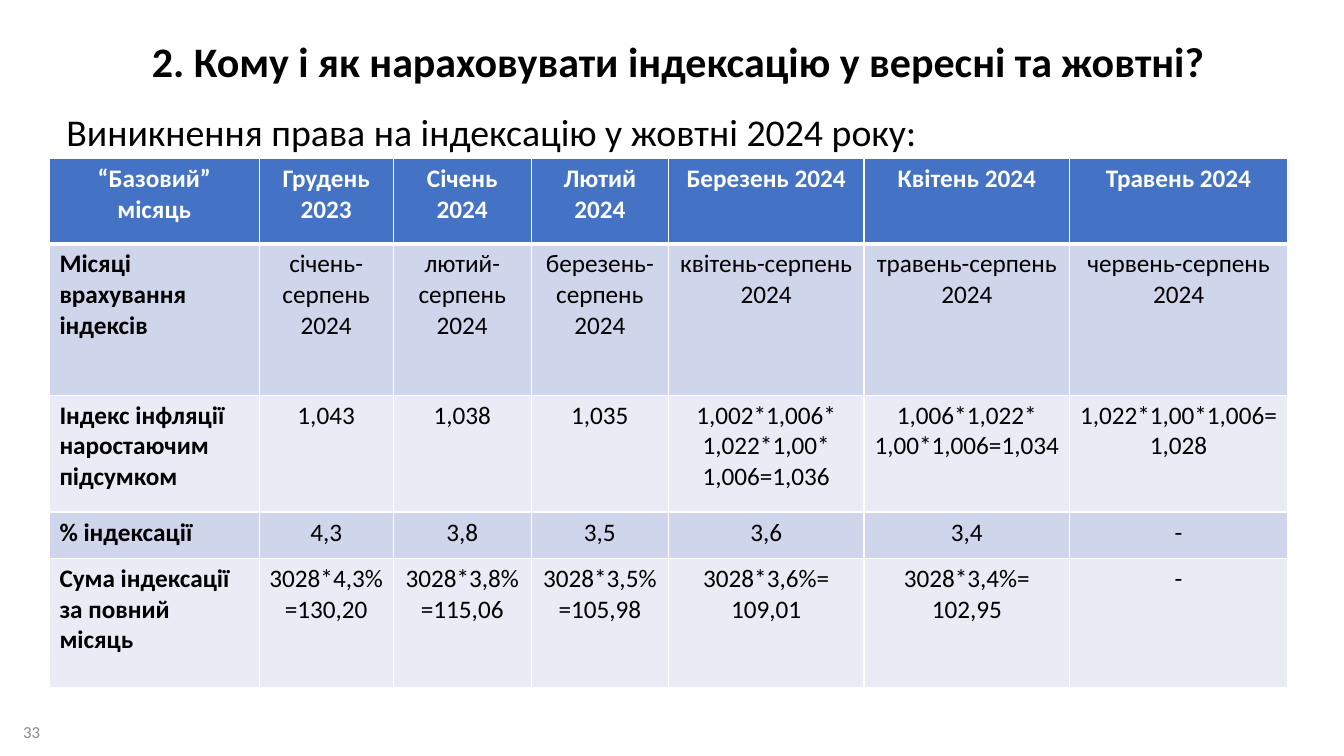
from lxml import etree
from pptx import Presentation, util as u
from pptx.dml.color import RGBColor
from pptx.enum import text
from pptx.oxml import ns

COLORS = {"ink": "000000", "white": "FFFFFF", "number": "898989",
          "header": "4472C4", "band_dark": "CFD5EA", "band_light": "E9EBF5"}

COLUMN_WIDTHS = [2.08, 1.33, 1.37, 1.36, 1.94, 2.04, 2.16]
ROW_HEIGHTS = [0.85, 1.5, 1.16, 0.46, 1.28]
INDEXATION = [
    ["“Базовий” місяць", "Грудень 2023", "Січень 2024", "Лютий 2024",
     "Березень 2024", "Квітень 2024", "Травень 2024"],
    ["Місяці врахування індексів", "січень-серпень 2024", "лютий-серпень 2024",
     "березень-серпень 2024", "квітень-серпень 2024", "травень-серпень 2024",
     "червень-серпень 2024"],
    ["Індекс інфляції наростаючим підсумком", "1,043", "1,038", "1,035",
     "1,002*1,006*\n1,022*1,00*\n1,006=1,036",
     "1,006*1,022*\n1,00*1,006=1,034", "1,022*1,00*1,006=1,028"],
    ["% індексації", "4,3", "3,8", "3,5", "3,6", "3,4", "-"],
    ["Сума індексації за повний місяць", "3028*4,3%=130,20", "3028*3,8%=115,06",
     "3028*3,5%=105,98", "3028*3,6%=\n109,01", "3028*3,4%=\n102,95", "-"],
]


class SlideBuilder:
    """Draws styled text and tables on the current slide."""

    def __init__(self, slide, font="Calibri"):
        self.slide = slide
        self.font = font

    def add_lines(self, frame, wording, size, color, bold=False, centered=False, spacing=None):
        for index, line in enumerate(wording.split("\n")):
            paragraph = frame.add_paragraph() if index else frame.paragraphs[0]
            paragraph.alignment = text.PP_ALIGN.CENTER if centered else text.PP_ALIGN.LEFT
            if spacing:
                paragraph.line_spacing = spacing
            run = paragraph.add_run()
            run.text = line
            run.font.name = self.font
            run.font.size = u.Pt(size)
            run.font.bold = bold
            run.font.color.rgb = RGBColor.from_string(COLORS[color])

    def label(self, box, wording, size, color, anchor=text.MSO_ANCHOR.TOP, **style):
        frame = self.slide.shapes.add_textbox(*map(u.Inches, box)).text_frame
        frame.word_wrap = True
        frame.vertical_anchor = anchor
        self.add_lines(frame, wording, size, color, **style)

    def border(self, cell, side, width):
        line = etree.SubElement(cell._tc.get_or_add_tcPr(), ns.qn(f"a:ln{side}"),
                                w=str(u.Pt(width)))
        fill = etree.SubElement(line, ns.qn("a:solidFill"))
        etree.SubElement(fill, ns.qn("a:srgbClr"), val=COLORS["white"])

    def table(self, left, top, widths, heights, rows, size):
        box = map(u.Inches, (left, top, sum(widths), sum(heights)))
        grid = self.slide.shapes.add_table(len(rows), len(widths), *box).table
        for column, width in zip(grid.columns, widths):
            column.width = u.Inches(width)
        for r, (height, row) in enumerate(zip(heights, rows)):
            grid.rows[r].height = u.Inches(height)
            heading = r == 0
            band = "header" if heading else "band_dark" if r % 2 else "band_light"
            for c, wording in enumerate(row):
                cell = grid.cell(r, c)
                for side in "LRTB":
                    thick = (heading and side == "B") or (r == 1 and side == "T")
                    self.border(cell, side, 3 if thick else 1)
                cell.fill.solid()
                cell.fill.fore_color.rgb = RGBColor.from_string(COLORS[band])
                self.add_lines(cell.text_frame, wording, size, "white" if heading else "ink",
                               bold=heading or c == 0, centered=heading or c > 0)


def main():
    deck = Presentation()
    deck.slide_width, deck.slide_height = u.Inches(13.33), u.Inches(7.5)
    page = SlideBuilder(deck.slides.add_slide(deck.slide_layouts[6]))
    page.label((0.56, 1.03, 12.21, 5.93),
               "Виникнення права на індексацію у жовтні 2024 року:", 27, "ink")
    page.label((0.13, 7.06, 0.55, 0.39), "33", 12, "number", anchor=text.MSO_ANCHOR.MIDDLE)
    page.label((0.45, 0.36, 12.56, 0.57),
               "2. Кому і як нараховувати індексацію у вересні та жовтні?", 30, "ink",
               bold=True, centered=True, spacing=0.9)
    page.table(0.49, 1.57, COLUMN_WIDTHS, ROW_HEIGHTS, INDEXATION, 18)
    deck.save("out.pptx")


if __name__ == "__main__":
    main()
